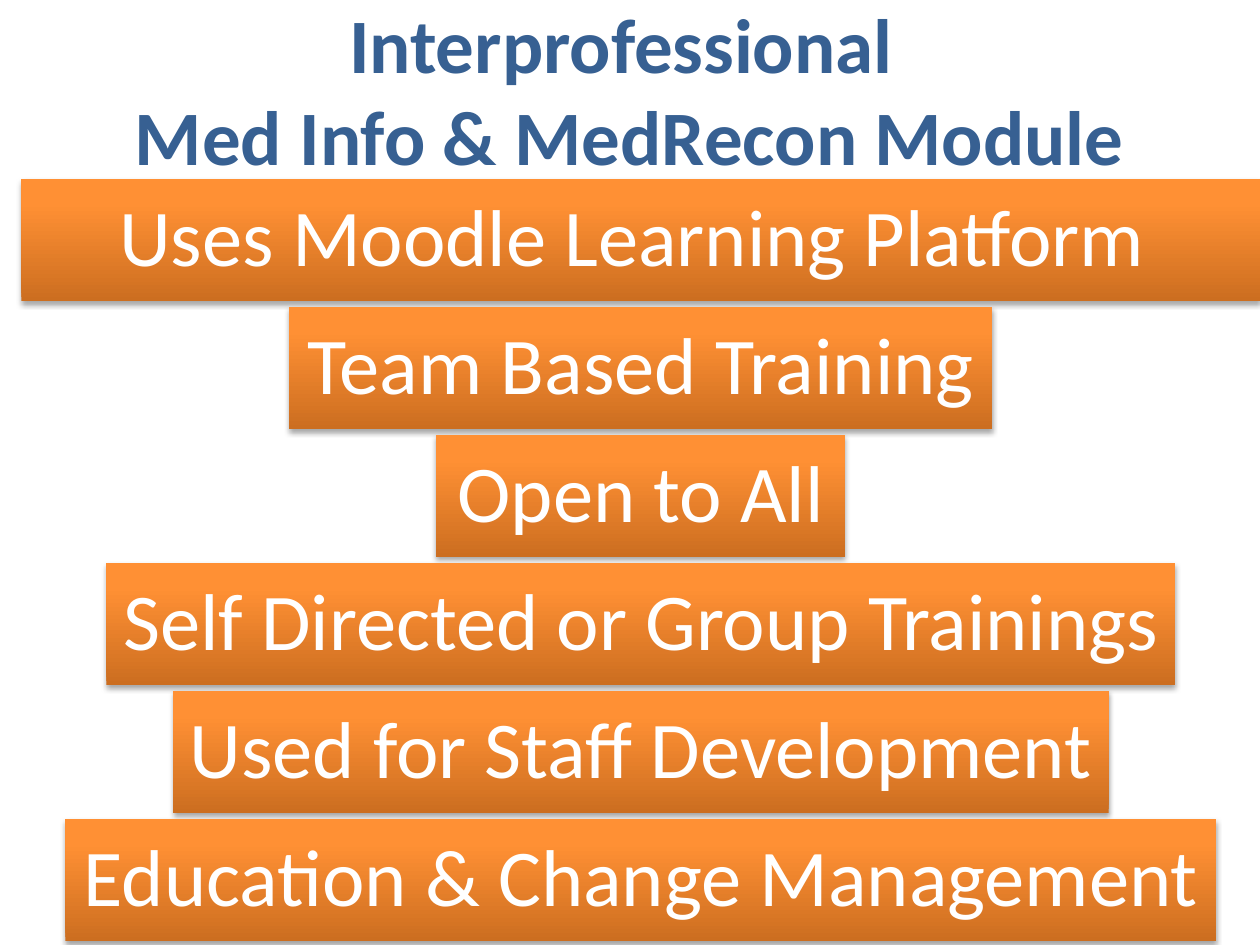
"""Build the Med Info and MedRecon module slide with its stacked bars."""
import pptx
import pptx.dml.color
import pptx.enum.shapes
import pptx.enum.text
import pptx.oxml
import pptx.oxml.ns
import pptx.util

Inches = pptx.util.Inches
Pt = pptx.util.Pt
CENTER = pptx.enum.text.PP_ALIGN.CENTER
MIDDLE = pptx.enum.text.MSO_ANCHOR.MIDDLE
NS = pptx.oxml.ns.nsdecls("a")

GRAD = f"""<a:gradFill {NS} rotWithShape="1"><a:gsLst>
<a:gs pos="0"><a:srgbClr val="CC6E20"/></a:gs>
<a:gs pos="80000"><a:srgbClr val="FF9034"/></a:gs>
<a:gs pos="100000"><a:srgbClr val="FF9136"/></a:gs>
</a:gsLst><a:lin ang="16200000" scaled="0"/></a:gradFill>"""
SHADOW = f"""<a:effectLst {NS}>
<a:outerShdw blurRad="40000" dist="23000" dir="5400000" rotWithShape="0">
<a:srgbClr val="000000"><a:alpha val="35000"/></a:srgbClr>
</a:outerShdw></a:effectLst>"""


def style(font, size, color, bold=False):
    font.name = "Calibri"
    font.size = Pt(size)
    font.bold = bold
    font.color.rgb = pptx.dml.color.RGBColor.from_string(color)


deck = pptx.Presentation()
deck.slide_width = Inches(10)
deck.slide_height = Inches(7.5)
slide = deck.slides.add_slide(deck.slide_layouts[6])

title = slide.shapes.add_textbox(Inches(0), Inches(0.08), Inches(10), Inches(1.25))
frame = title.text_frame
frame.word_wrap = True
frame.vertical_anchor = MIDDLE
para = frame.paragraphs[0]
para.alignment = CENTER
first = para.add_run()
first.text = "Interprofessional "
para.add_line_break()
second = para.add_run()
second.text = "Med Info & MedRecon Module"
for run in (first, second):
    style(run.font, 44, "376092", True)

bars = [
    ("Uses Moodle Learning Platform ", 9.83),
    ("Team Based Training", 5.58),
    ("Open to All", 3.25),
    ("Self Directed or Group Trainings", 8.48),
    ("Used for Staff Development", 7.43),
    ("Education & Change Management", 9.13),
]
for row, (text, width) in enumerate(bars):
    bar = slide.shapes.add_shape(
        pptx.enum.shapes.MSO_SHAPE.RECTANGLE,
        Inches((10.17 - width) / 2), Inches(1.42 + 5.08 * row / 5),
        Inches(width), Inches(0.97))
    bar.line.fill.background()
    props = bar._element.spPr
    props.insert(2, pptx.oxml.parse_xml(GRAD))
    props.append(pptx.oxml.parse_xml(SHADOW))
    frame = bar.text_frame
    frame.word_wrap = False
    frame.vertical_anchor = MIDDLE
    frame.margin_left = frame.margin_right = Inches(0.13)
    frame.margin_top = frame.margin_bottom = Inches(0.13)
    para = frame.paragraphs[0]
    para.alignment = CENTER
    para.line_spacing = 0.9
    run = para.add_run()
    run.text = text
    style(run.font, 46, "FFFFFF")

deck.save("out.pptx")
